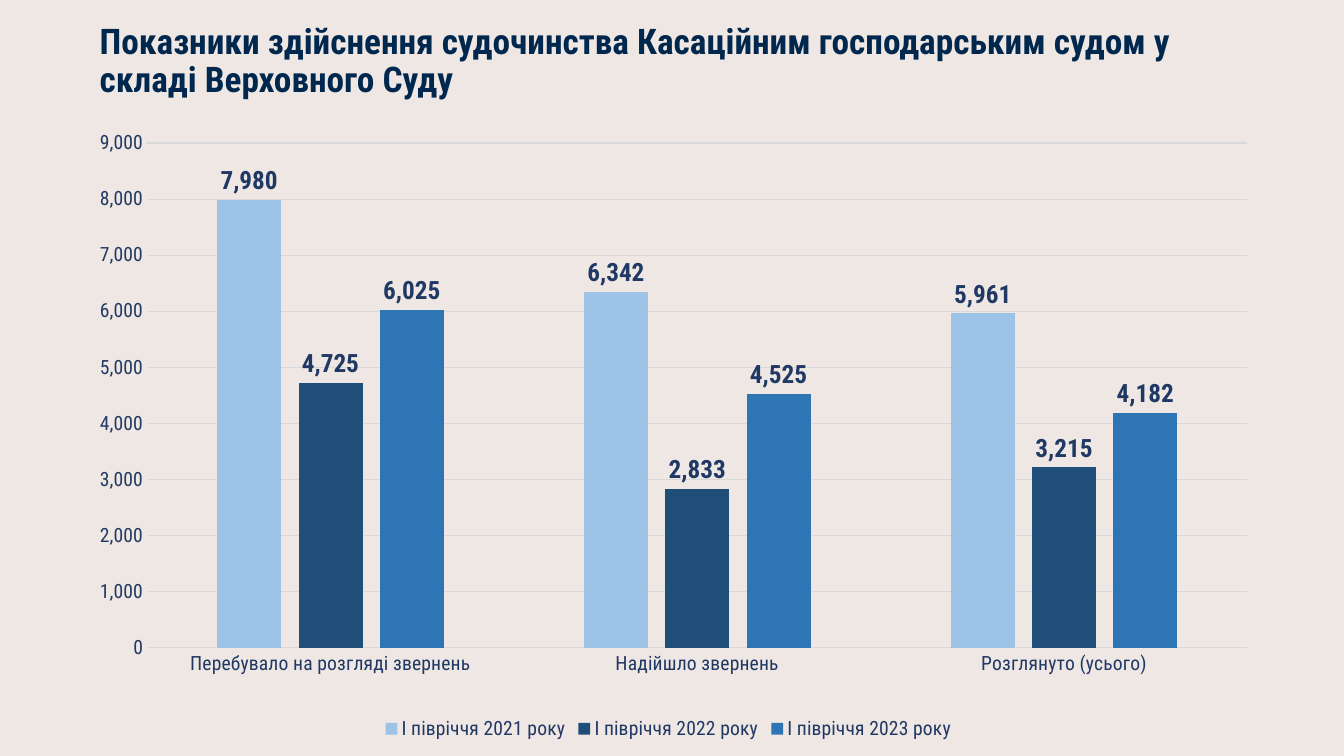
from lxml.etree import SubElement
from pptx import Presentation
from pptx.chart.data import CategoryChartData
from pptx.dml.color import RGBColor
from pptx.enum.chart import XL_CHART_TYPE, XL_LABEL_POSITION, XL_LEGEND_POSITION, XL_TICK_MARK
from pptx.enum.text import MSO_ANCHOR
from pptx.oxml.ns import qn
from pptx.util import Inches, Pt

FONT = "Roboto Condensed"
NAVY = "203864"
GRID = "D9D9D9"
NUMBER_FORMAT = "#,##0"
TITLE = "Показники здійснення судочинства Касаційним господарським судом у складі Верховного Суду"
STAGES = ["Перебувало на розгляді звернень", "Надійшло звернень", "Розглянуто (усього)"]
PERIODS = [
    ("І півріччя 2021 року", (7980, 6342, 5961), "9DC3E6"),
    ("І півріччя 2022 року", (4725, 2833, 3215), "1F4E79"),
    ("І півріччя 2023 року", (6025, 4525, 4182), "2E75B6"),
]


def rgb(value):
    """Turn a hex string into a colour."""
    return RGBColor.from_string(value)


def style_font(font, size, color, bold=False):
    """Set the typeface, size, colour and weight of a font."""
    font.name = FONT
    font.size = Pt(size)
    font.bold = bold
    font.color.rgb = rgb(color)


def style_line(line):
    """Draw a thin grey line."""
    line.width = Pt(0.75)
    line.color.rgb = rgb(GRID)


def add_title(slide):
    """Add the heading above the chart."""
    heading = slide.shapes.add_textbox(Inches(0.89), Inches(0.24), Inches(11.71), Inches(0.76))
    frame = heading.text_frame
    frame.word_wrap = True
    frame.vertical_anchor = MSO_ANCHOR.MIDDLE
    frame.text = TITLE
    paragraph = frame.paragraphs[0]
    paragraph.line_spacing = 0.9
    style_font(paragraph.runs[0].font, 25.2, "00274E", True)


def place_plot(chart, **fractions):
    """Fix the inner plot area as fractions of the chart."""
    plot_area = chart.element.find(".//" + qn("c:plotArea"))
    for automatic in plot_area.findall(qn("c:layout")):
        plot_area.remove(automatic)
    layout = SubElement(plot_area, qn("c:layout"))
    plot_area.insert(0, layout)
    manual = SubElement(layout, qn("c:manualLayout"))
    settings = {"layoutTarget": "inner", "xMode": "edge", "yMode": "edge", **fractions}
    for tag, value in settings.items():
        SubElement(manual, qn(f"c:{tag}")).set("val", str(value))


def style_axes(chart):
    """Format the stage axis and the count axis."""
    stages, counts = chart.category_axis, chart.value_axis
    for axis in (stages, counts):
        axis.major_tick_mark = axis.minor_tick_mark = XL_TICK_MARK.NONE
        style_font(axis.tick_labels.font, 14, NAVY)
    style_line(stages.format.line)
    counts.format.line.fill.background()
    counts.minimum_scale, counts.maximum_scale, counts.major_unit = 0, 9000, 1000
    counts.tick_labels.number_format = NUMBER_FORMAT
    counts.tick_labels.number_format_is_linked = False
    style_line(counts.major_gridlines.format.line)


def style_period(series, color):
    """Colour the columns of one period and label their values."""
    series.format.fill.solid()
    series.format.fill.fore_color.rgb = rgb(color)
    series.invert_if_negative = False
    labels = series.data_labels
    labels.show_value = True
    labels.position = XL_LABEL_POSITION.OUTSIDE_END
    labels.number_format = NUMBER_FORMAT
    labels.number_format_is_linked = False
    style_font(labels.font, 18, NAVY, True)


def add_court_chart(slide):
    """Add the clustered columns comparing the three periods."""
    data = CategoryChartData(number_format=NUMBER_FORMAT)
    data.categories = STAGES
    for name, values, _ in PERIODS:
        data.add_series(name, values)
    chart = slide.shapes.add_chart(
        XL_CHART_TYPE.COLUMN_CLUSTERED,
        Inches(0.66), Inches(1.17), Inches(11.94), Inches(6.22), data,
    ).chart
    chart.has_title = False
    style_font(chart.font, 14, NAVY)
    chart.has_legend = True
    chart.legend.position = XL_LEGEND_POSITION.BOTTOM
    chart.legend.include_in_layout = False
    style_font(chart.legend.font, 14, NAVY)
    plot = chart.plots[0]
    plot.gap_width, plot.overlap = 219, -27
    plot.vary_by_categories = False
    for series, (_, _, color) in zip(plot.series, PERIODS):
        style_period(series, color)
    style_axes(chart)
    place_plot(chart, x=0.067, y=0.04, w=0.914, h=0.805)


def main():
    """Build and save the slide."""
    deck = Presentation()
    deck.slide_width, deck.slide_height = Inches(13.33), Inches(7.5)
    slide = deck.slides.add_slide(deck.slide_layouts[6])
    slide.background.fill.solid()
    slide.background.fill.fore_color.rgb = rgb("EFE7E3")
    add_court_chart(slide)
    add_title(slide)
    deck.save("out.pptx")


if __name__ == "__main__":
    main()
